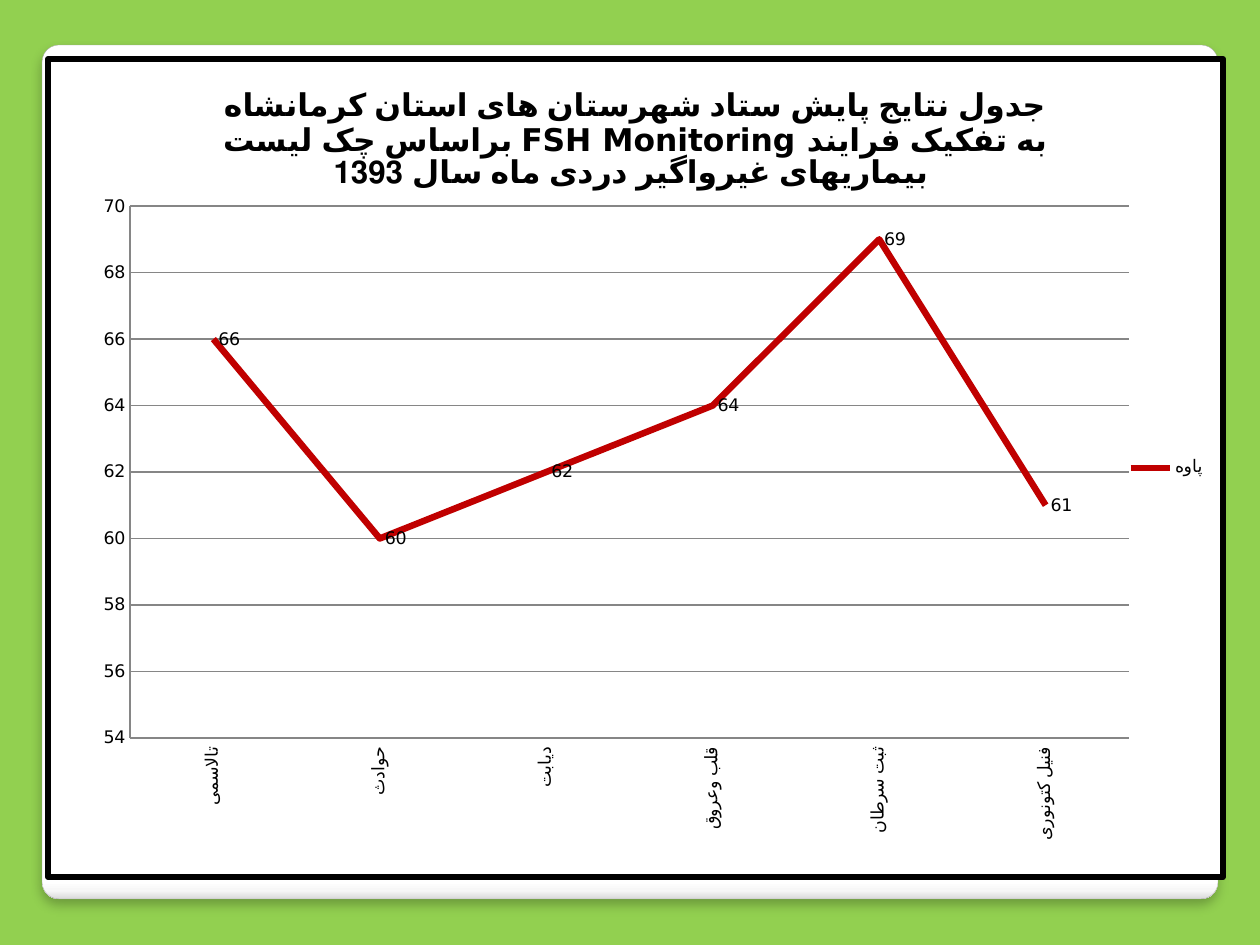
from typing import NamedTuple

from lxml.etree import fromstring
from pptx import Presentation
from pptx.chart.data import CategoryChartData
from pptx.dml.color import RGBColor
from pptx.enum.chart import (XL_CHART_TYPE, XL_LABEL_POSITION, XL_LEGEND_POSITION,
                             XL_MARKER_STYLE, XL_TICK_MARK)
from pptx.enum.shapes import MSO_SHAPE
from pptx.oxml.ns import nsdecls, qn
from pptx.util import Emu, Pt

GREEN = RGBColor(0x92, 0xD0, 0x50)
WHITE = RGBColor(0xFF, 0xFF, 0xFF)
PALE = RGBColor(0xF7, 0xF7, 0xF7)
SILVER = RGBColor(0xDA, 0xDA, 0xDA)
EDGE = RGBColor(0xA4, 0xA4, 0xA4)
GRID = RGBColor(0x86, 0x86, 0x86)
BLACK = RGBColor(0, 0, 0)
RED = RGBColor(0xC0, 0, 0)
FONT = "DejaVu Sans"
TITLE = ("جدول نتایج پایش ستاد شهرستان های استان کرمانشاه براساس چک لیست "
         "FSH Monitoring به تفکیک فرایند بیماریهای غیرواگیر دردی ماه سال 1393 ")


class Box(NamedTuple):
    x: int
    y: int
    w: int
    h: int


class Score(NamedTuple):
    name: str
    value: int


PANEL = Box(42, 45, 1176, 854)
CHART = Box(45, 56, 1181, 824)
SCORES = [Score("تالاسمی ", 66), Score("حوادث ", 60), Score("دیابت ", 62),
          Score("قلب وعروق ", 64), Score("ثبت سرطان ", 69), Score("فنیل کتونوری ", 61)]
STOPS = [(0, WHITE), (98, WHITE), (99, PALE), (100, SILVER)]
PLOT = {"x": 0.07, "y": 0.18, "w": 0.85, "h": 0.65}


def px(n: int) -> Emu:
    """Turn slide pixels into EMU."""
    return Emu(round(n * 914400 / 126))


def emu(box: Box) -> list[Emu]:
    """Turn a box into EMU lengths."""
    return [px(n) for n in box]


def style(font, *, size: float = 10, bold: bool = False, color: RGBColor = BLACK) -> None:
    """Set the face, size, weight and colour of a font."""
    font.name, font.size, font.bold = FONT, Pt(size), bold
    font.color.rgb = color


def write(tf, text: str, **fmt) -> None:
    """Write one formatted run into a text frame."""
    r = tf.paragraphs[0].add_run()
    r.text = text
    style(r.font, **fmt)


def stroke(line, color: RGBColor, width: float) -> None:
    """Give a line its colour and width."""
    line.color.rgb, line.width = color, Pt(width)


def add_panel(s, box: Box) -> None:
    """Draw the rounded panel with its gradient and soft shadow."""
    sp = s.shapes.add_shape(MSO_SHAPE.ROUNDED_RECTANGLE, *emu(box))
    sp.adjustments[0] = 0.02
    sp.shadow.inherit = False
    stroke(sp.line, EDGE, 0.16)
    stops = "".join(f'<a:gs pos="{pos * 1000}"><a:srgbClr val="{color}"/></a:gs>'
                    for pos, color in STOPS)
    props = sp.element.spPr
    props.find(qn("a:prstGeom")).addnext(fromstring(
        f'<a:gradFill {nsdecls("a")}><a:gsLst>{stops}</a:gsLst>'
        '<a:lin ang="5400000" scaled="0"/></a:gradFill>'))
    props.find(qn("a:effectLst")).append(fromstring(
        f'<a:outerShdw {nsdecls("a")} blurRad="{Pt(6)}" dist="{Pt(4)}" dir="5400000" '
        f'rotWithShape="0"><a:srgbClr val="{BLACK}"><a:alpha val="25000"/></a:srgbClr>'
        '</a:outerShdw>'))


def frame_chart(chart, width: float) -> None:
    """Fill and border the chart area and place its plot."""
    body = chart.element.find(qn("c:chart"))
    body.addnext(fromstring(
        f'<c:spPr {nsdecls("c", "a")}><a:solidFill><a:srgbClr val="{WHITE}"/></a:solidFill>'
        f'<a:ln w="{Pt(width)}"><a:solidFill><a:srgbClr val="{BLACK}"/></a:solidFill></a:ln>'
        '</c:spPr>'))
    plot = body.find(qn("c:plotArea"))
    for old in plot.findall(qn("c:layout")):
        plot.remove(old)
    sizes = "".join(f'<c:{key} val="{val}"/>' for key, val in PLOT.items())
    plot.insert(0, fromstring(
        f'<c:layout {nsdecls("c")}><c:manualLayout><c:layoutTarget val="inner"/>'
        f'<c:xMode val="edge"/><c:yMode val="edge"/>{sizes}</c:manualLayout></c:layout>'))


def add_scores(s, box: Box, scores: list[Score]) -> None:
    """Draw the line chart of scores by process."""
    data = CategoryChartData(number_format="General")
    data.categories = [score.name for score in scores]
    data.add_series("پاوه ", [score.value for score in scores])
    chart = s.shapes.add_chart(XL_CHART_TYPE.LINE, *emu(box), data).chart
    frame_chart(chart, 3.35)
    style(chart.font)
    write(chart.chart_title.text_frame, TITLE, size=18, bold=True)
    chart.has_legend = True
    chart.legend.position = XL_LEGEND_POSITION.RIGHT
    chart.legend.include_in_layout = False
    cat, val = chart.category_axis, chart.value_axis
    for axis in (cat, val):
        axis.major_tick_mark = axis.minor_tick_mark = XL_TICK_MARK.NONE
        stroke(axis.format.line, GRID, 0.75)
        style(axis.tick_labels.font)
    names = next(chart.element.iter(qn("c:catAx"))).find(qn("c:txPr"))
    names.find(qn("a:bodyPr")).set("rot", "-5400000")
    val.minimum_scale, val.maximum_scale, val.major_unit = 54, 70, 2
    val.has_major_gridlines = True
    stroke(val.major_gridlines.format.line, GRID, 0.75)
    chart.plots[0].vary_by_categories = False
    series = chart.plots[0].series[0]
    series.smooth = False
    series.marker.style = XL_MARKER_STYLE.NONE
    stroke(series.format.line, RED, 3.75)
    labels = series.data_labels
    labels.show_value = True
    labels.position = XL_LABEL_POSITION.RIGHT
    style(labels.font)


def main() -> None:
    """Build the slide and save it."""
    prs = Presentation()
    prs.slide_width, prs.slide_height = px(1260), px(945)
    s = prs.slides.add_slide(prs.slide_layouts[6])
    s.background.fill.solid()
    s.background.fill.fore_color.rgb = GREEN
    add_panel(s, PANEL)
    add_scores(s, CHART, SCORES)
    prs.save("out.pptx")


if __name__ == "__main__":
    main()
